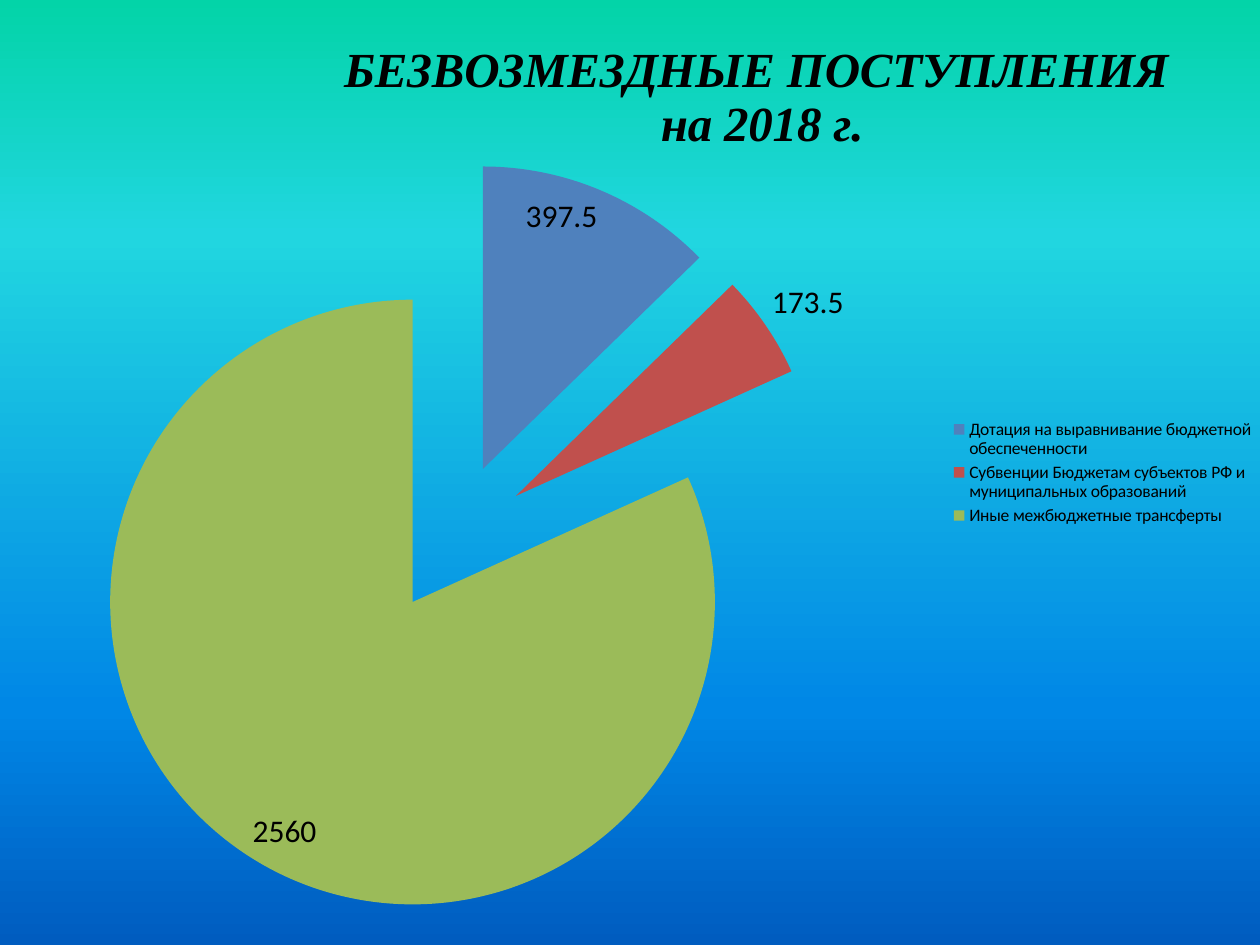
from lxml.etree import SubElement
from pptx import Presentation
from pptx.chart.data import CategoryChartData
from pptx.dml.color import RGBColor
from pptx.enum.chart import XL_CHART_TYPE, XL_LABEL_POSITION, XL_LEGEND_POSITION
from pptx.oxml import parse_xml
from pptx.oxml.ns import nsdecls, qn
from pptx.util import Cm, Pt

BLACK = RGBColor(0x00, 0x00, 0x00)
BLUE = RGBColor(0x4F, 0x81, 0xBD)
RED = RGBColor(0xC0, 0x50, 0x4D)
GREEN = RGBColor(0x9B, 0xBB, 0x59)
SKY = [
    (0, RGBColor(0x03, 0xD4, 0xA8)),
    (25, RGBColor(0x21, 0xD6, 0xE0)),
    (75, RGBColor(0x00, 0x87, 0xE6)),
    (100, RGBColor(0x00, 0x5C, 0xBF)),
]
TITLE = "БЕЗВОЗМЕЗДНЫЕ ПОСТУПЛЕНИЯ \nна 2018 г."
RECEIPTS = [
    ("Дотация на выравнивание бюджетной обеспеченности", 397.5, BLUE),
    ("Субвенции Бюджетам субъектов РФ и муниципальных образований", 173.5, RED),
    ("Иные межбюджетные трансферты", 2560, GREEN),
]
WIDTH, HEIGHT = Cm(25.4), Cm(19.05)


class BudgetSlide:
    body_font = "Calibri"
    title_font = "Times New Roman"
    label_size = Pt(18)
    title_size = Pt(28)
    legend_size = Pt(10)

    def __init__(self, slide):
        self.slide = slide

    def style(self, font, size, name=body_font):
        font.name = name
        font.size = size
        font.color.rgb = BLACK

    def background(self, stops):
        fill = self.slide.background.fill
        fill.gradient()
        fill.gradient_angle = 270
        stop_list = self.slide.background._cSld.find(".//" + qn("a:gsLst"))
        for stop in list(stop_list):
            stop_list.remove(stop)
        for percent, color in stops:
            stop = SubElement(stop_list, qn("a:gs"), pos=str(percent * 1000))
            SubElement(stop, qn("a:srgbClr"), val=str(color))

    def place(self, part, index, inner=False, **fractions):
        for layout in part.findall(qn("c:layout")):
            part.remove(layout)
        layout = parse_xml(f"<c:layout {nsdecls('c')}><c:manualLayout/></c:layout>")
        settings = {"layoutTarget": "inner"} if inner else {}
        settings.update(xMode="edge", yMode="edge", **fractions)
        for tag, value in settings.items():
            SubElement(layout[0], qn(f"c:{tag}"), val=str(value))
        part.insert(index, layout)

    def pie(self, receipts):
        data = CategoryChartData()
        data.categories = [name for name, _, _ in receipts]
        data.add_series("Series 1", [value for _, value, _ in receipts])
        chart = self.slide.shapes.add_chart(
            XL_CHART_TYPE.PIE, 0, 0, WIDTH, HEIGHT, data
        ).chart
        self.style(chart.font, self.label_size)
        area = parse_xml(
            f"<c:spPr {nsdecls('c', 'a')}><a:noFill/><a:ln><a:noFill/></a:ln></c:spPr>"
        )
        chart._chartSpace.find(qn("c:chart")).addnext(area)
        plot = chart.plots[0]
        plot.vary_by_categories = True
        self.place(plot._element.getparent(), 0, True, x=0.06, y=0.15, w=0.6, h=0.84)
        return chart

    def slices(self, chart, receipts, explosion):
        series = chart.plots[0].series[0]
        for index, (_, _, color) in enumerate(receipts):
            fill = series.points[index].format.fill
            fill.solid()
            fill.fore_color.rgb = color
        gap = parse_xml(f'<c:explosion {nsdecls("c")} val="{explosion}"/>')
        series._element.find(qn("c:tx")).addnext(gap)

    def labels(self, chart, outside):
        series = chart.plots[0].series[0]
        labels = series.data_labels
        labels.show_value = True
        labels.position = XL_LABEL_POSITION.INSIDE_END
        self.style(labels.font, self.label_size)
        outer = series.points[outside].data_label
        self.style(outer.font, self.label_size)
        outer.position = XL_LABEL_POSITION.OUTSIDE_END

    def title(self, chart, text):
        heading = chart.chart_title
        heading.text_frame.text = text
        heading.include_in_layout = False
        for paragraph in heading.text_frame.paragraphs:
            self.style(paragraph.font, self.title_size, self.title_font)
            paragraph.font.bold = True
            paragraph.font.italic = True
        self.place(heading._element, 1, x=0.27, y=0.04)

    def legend(self, chart):
        chart.has_legend = True
        legend = chart.legend
        legend.position = XL_LEGEND_POSITION.RIGHT
        legend.include_in_layout = False
        self.style(legend.font, self.legend_size)
        self.place(legend._element, 1, x=0.75, y=0.44, w=0.25, h=0.12)


def main():
    presentation = Presentation()
    presentation.slide_width = WIDTH
    presentation.slide_height = HEIGHT
    budget = BudgetSlide(presentation.slides.add_slide(presentation.slide_layouts[6]))
    budget.background(SKY)
    receipts_chart = budget.pie(RECEIPTS)
    budget.slices(receipts_chart, RECEIPTS, 25)
    budget.labels(receipts_chart, 1)
    budget.title(receipts_chart, TITLE)
    budget.legend(receipts_chart)
    presentation.save("out.pptx")


if __name__ == "__main__":
    main()
